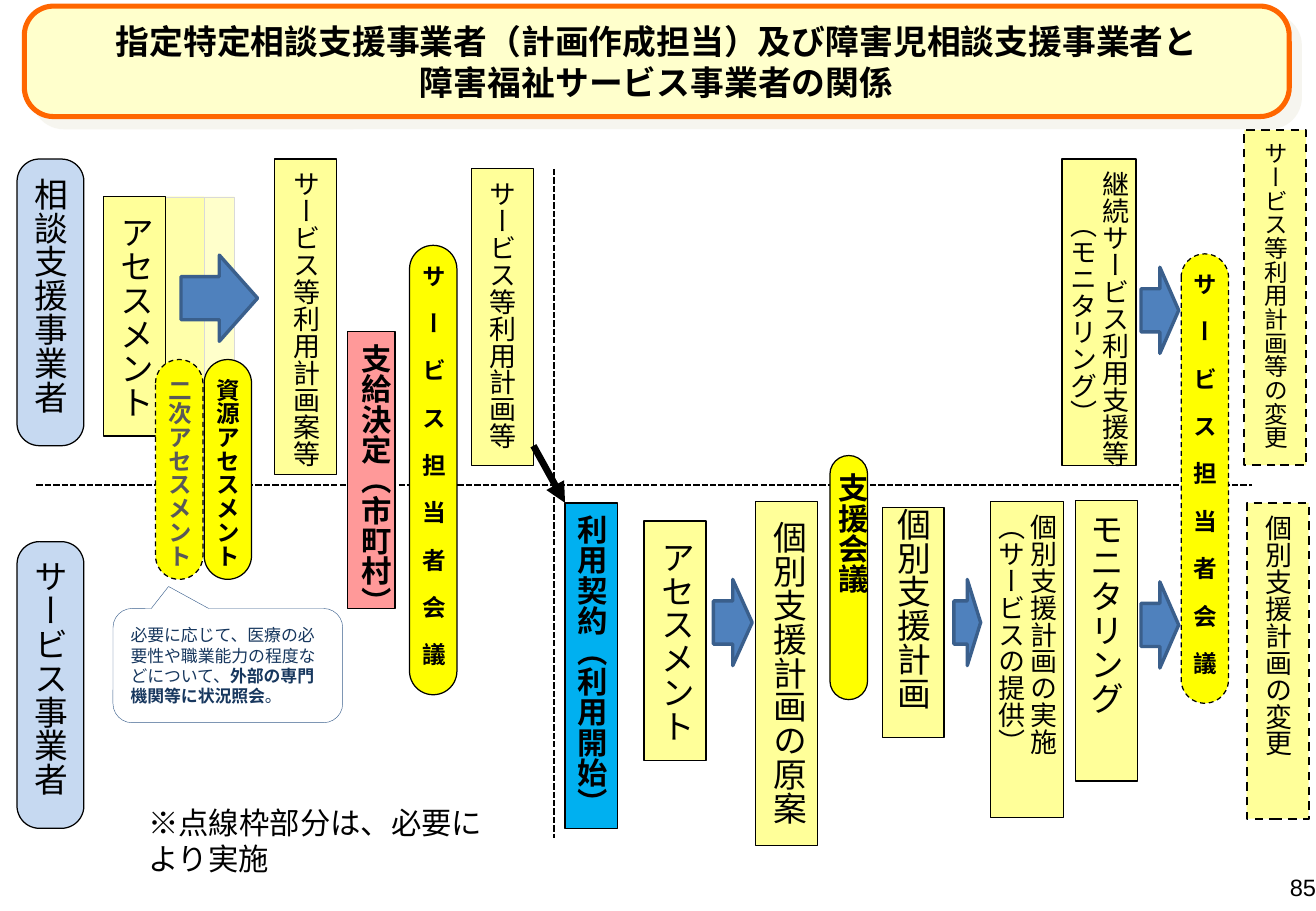
from lxml import etree
from pptx import Presentation
from pptx import util as u
from pptx.dml.color import RGBColor
from pptx.enum import dml, shapes, text
from pptx.oxml import ns

GOTHIC = "Noto Sans CJK JP"
KINDS = shapes.MSO_SHAPE
DASH = dml.MSO_LINE.DASH
CENTER = text.PP_ALIGN.CENTER
LEFT = text.PP_ALIGN.LEFT
YELLOW, PALE, BLUE, BLACK = "FFFF00", "FFFF99", "C6D9F1", "000000"


def color(value):
    return RGBColor.from_string(value)


def child(parent, tag, **attributes):
    return etree.SubElement(parent, ns.qn(tag), attributes)


class Board:
    def __init__(self, slide):
        self.shapes = slide.shapes

    def shape(self, at, kind=KINDS.RECTANGLE, fill=PALE, line=BLACK, width=0.75,
              dash=None, adjust=(), alpha=None):
        shape = self.shapes.add_shape(kind, *map(u.Inches, at))
        shape.shadow.inherit = False
        shape.fill.solid()
        shape.fill.fore_color.rgb = color(fill)
        if alpha:
            fill_color = shape.element.spPr.find(ns.qn("a:solidFill"))[0]
            child(fill_color, "a:alpha", val=str(alpha * 1000))
        shape.line.color.rgb = color(line)
        shape.line.width = u.Pt(width)
        if dash:
            shape.line.dash_style = dash
        for index, value in enumerate(adjust):
            shape.adjustments[index] = value
        return shape

    def letter(self, shape, paragraphs, size, ink=BLACK, bold=False, align=CENTER,
               font=GOTHIC, insets=(0.1, 0.05), spacing=None, vertical=False,
               anchor=text.MSO_ANCHOR.MIDDLE):
        frame = shape.text_frame
        frame.word_wrap = not vertical
        frame.vertical_anchor = anchor
        frame.margin_left = frame.margin_right = u.Inches(insets[0])
        frame.margin_top = frame.margin_bottom = u.Inches(insets[1])
        if vertical:
            shape.element.txBody.bodyPr.set("vert", "eaVert")
        frame.text = "\n".join(paragraphs)
        for paragraph in frame.paragraphs:
            paragraph.alignment = align
            if spacing:
                paragraph.line_spacing = u.Pt(spacing)
            paragraph.font.name = font
            paragraph.font.size = u.Pt(size)
            paragraph.font.bold = bold
            paragraph.font.color.rgb = color(ink)
        for latin in list(shape.element.iter(ns.qn("a:latin"))):
            latin.addnext(etree.Element(ns.qn("a:ea"), typeface=GOTHIC))
        return frame

    def box(self, at, paragraphs, size, align=CENTER, insets=(0.1, 0.05), **style):
        shape = self.shape(at, **style)
        self.letter(shape, paragraphs, size, align=align, insets=insets, vertical=True)

    def pill(self, at, label, size, ink=BLACK, fill=YELLOW, radius=0.5, dash=None):
        shape = self.shape(at, KINDS.ROUNDED_RECTANGLE, fill, dash=dash, adjust=[radius])
        self.letter(shape, [label], size, ink, True, insets=(0.04, 0.05),
                    spacing=17, vertical=True)

    def arrow(self, left, top, width):
        self.shape((left, top, width, 0.71), KINDS.RIGHT_ARROW, "4F81BD", "3A5F8C", 2)

    def line(self, start, end, width=1.25, dash=None, head=False):
        line = self.shapes.add_connector(shapes.MSO_CONNECTOR.STRAIGHT,
                                         *map(u.Inches, start + end))
        line.line.color.rgb = color(BLACK)
        line.line.width = u.Pt(width)
        if dash:
            line.line.dash_style = dash
        if head:
            child(line.element.spPr.find(ns.qn("a:ln")), "a:tailEnd", type="triangle")
        child(line.element.spPr, "a:effectLst")

    def label(self, at, words, size, align, insets):
        area = self.shapes.add_textbox(*map(u.Inches, at))
        self.letter(area, [words], size, align=align, font="Arial", insets=insets,
                    anchor=text.MSO_ANCHOR.TOP)

    def title(self, at, lines):
        banner = self.shape(at, KINDS.ROUNDED_RECTANGLE, "FFFFCC", "FF6600", 3,
                            adjust=[0.265])
        effects = banner.element.spPr.find(ns.qn("a:effectLst"))
        shadow = child(effects, "a:outerShdw", dist=str(int(u.Pt(8.5))), dir="2700000",
                       algn="ctr", rotWithShape="0")
        child(child(shadow, "a:srgbClr", val="EEECE1"), "a:alpha", val="50000")
        self.letter(banner, lines, 20, bold=True)

    def callout(self, at, parts):
        bubble = self.shape(at, KINDS.ROUNDED_RECTANGULAR_CALLOUT, "FFFFFF", "3A5F8C",
                            0.25, adjust=[-0.258, -0.693, 0.167])
        frame = self.letter(bubble, [parts[0]], 10, "17375E", align=LEFT)
        for words, bold in zip(parts[1:], (True, False)):
            run = frame.paragraphs[0].add_run()
            run.text = words
            run.font.bold = bold


def main():
    deck = Presentation()
    deck.slide_width, deck.slide_height = u.Inches(10.83), u.Inches(7.5)
    board = Board(deck.slides.add_slide(deck.slide_layouts[6]))

    for left, width, alpha in ((1.18, 0.75, 50), (1.17, 0.51, 65)):
        board.shape((left, 1.62, width, 1.97), line="D9D9D9", width=0.25, alpha=alpha)
    for start, end in (((0.3, 3.99), (10.3, 3.99)), ((4.56, 1.39), (4.56, 6.9))):
        board.line(start, end, dash=dml.MSO_LINE.SQUARE_DOT)

    for top, provider in ((1.31, "相談支援事業者"), (4.46, "サービス事業者")):
        board.box((0.14, top, 0.55, 2.36), [provider], 20, fill=BLUE,
                  kind=KINDS.ROUNDED_RECTANGLE, adjust=[0.335])

    for left, top, height, step, size in (
            (0.85, 1.62, 1.97, " アセスメント", 20),
            (2.26, 1.31, 2.6, "サービス等利用計画案等", 16),
            (3.88, 1.39, 2.44, "サービス等利用計画等", 16),
            (5.3, 4.29, 1.97, " アセスメント", 20),
            (6.22, 4.13, 2.83, " 個別支援計画の原案", 20)):
        board.box((left, top, 0.51, height), [step], size, LEFT)

    board.box((7.26, 4.18, 0.51, 1.89), ["個別支援計画"], 20, insets=(0.1, 0))
    board.box((8.85, 4.12, 0.51, 2.31), ["モニタリング"], 20)
    board.box((8.74, 1.31, 0.61, 2.52), ["継続サービス利用支援等", "（モニタリング）"], 16)
    board.box((8.15, 4.13, 0.6, 2.6), ["個別支援計画の実施", "（サービスの提供）"], 16)
    board.box((10.26, 4.14, 0.51, 2.6), ["個別支援計画の変更"], 16, width=1.25, dash=DASH)
    board.box((10.24, 1.07, 0.51, 2.76), ["サービス等利用計画等の変更"], 14,
              width=1.25, dash=DASH)

    for left, top, width in ((5.87, 4.77, 0.32), (7.85, 4.77, 0.22), (9.39, 4.79, 0.31),
                             (9.39, 2.2, 0.31), (1.49, 2.1, 0.63)):
        board.arrow(left, top, width)

    meeting = "　".join("サービス担当者会議")
    board.pill((2.86, 2.73, 0.39, 2.28), "支給決定（市町村）", 18, fill="FF9999", radius=0)
    board.pill((6.83, 3.75, 0.31, 2.01), "支援会議", 18)
    board.pill((3.37, 2.02, 0.39, 3.7), meeting, 14)
    board.pill((9.72, 2.09, 0.39, 3.7), meeting, 14, dash=DASH)
    board.pill((1.68, 2.96, 0.39, 1.81), "資源アセスメント", 14)
    board.pill((1.28, 2.96, 0.39, 1.81), "二次アセスメント", 14, "595959", dash=DASH)

    contract = board.shape((4.65, 4.14, 0.43, 2.68), fill="00B0F0")
    board.letter(contract, ["利用契約（利用開始）"], 18, bold=True, font="Arial",
                 insets=(0.04, 0.05), vertical=True)
    board.line((4.39, 3.67), (4.65, 4.14), 4, head=True)

    board.title((0.2, 0.05, 10.41, 0.91),
                ["指定特定相談支援事業者（計画作成担当）及び障害児相談支援事業者と",
                 "障害福祉サービス事業者の関係"])
    board.callout((0.93, 5.01, 1.89, 0.94),
                  ["必要に応じて、医療の必要性や職業能力の程度などについて、",
                   "外部の専門機関等に状況照会", "。"])
    board.label((1.15, 6.59, 2.94, 0.68), "※点線枠部分は、必要により実施", 18,
                LEFT, (0.07, 0.03))
    board.label((8.4, 7.14, 2.53, 0.36), "85", 14, text.PP_ALIGN.RIGHT, (0.1, 0.05))
    deck.save("out.pptx")


if __name__ == "__main__":
    main()
